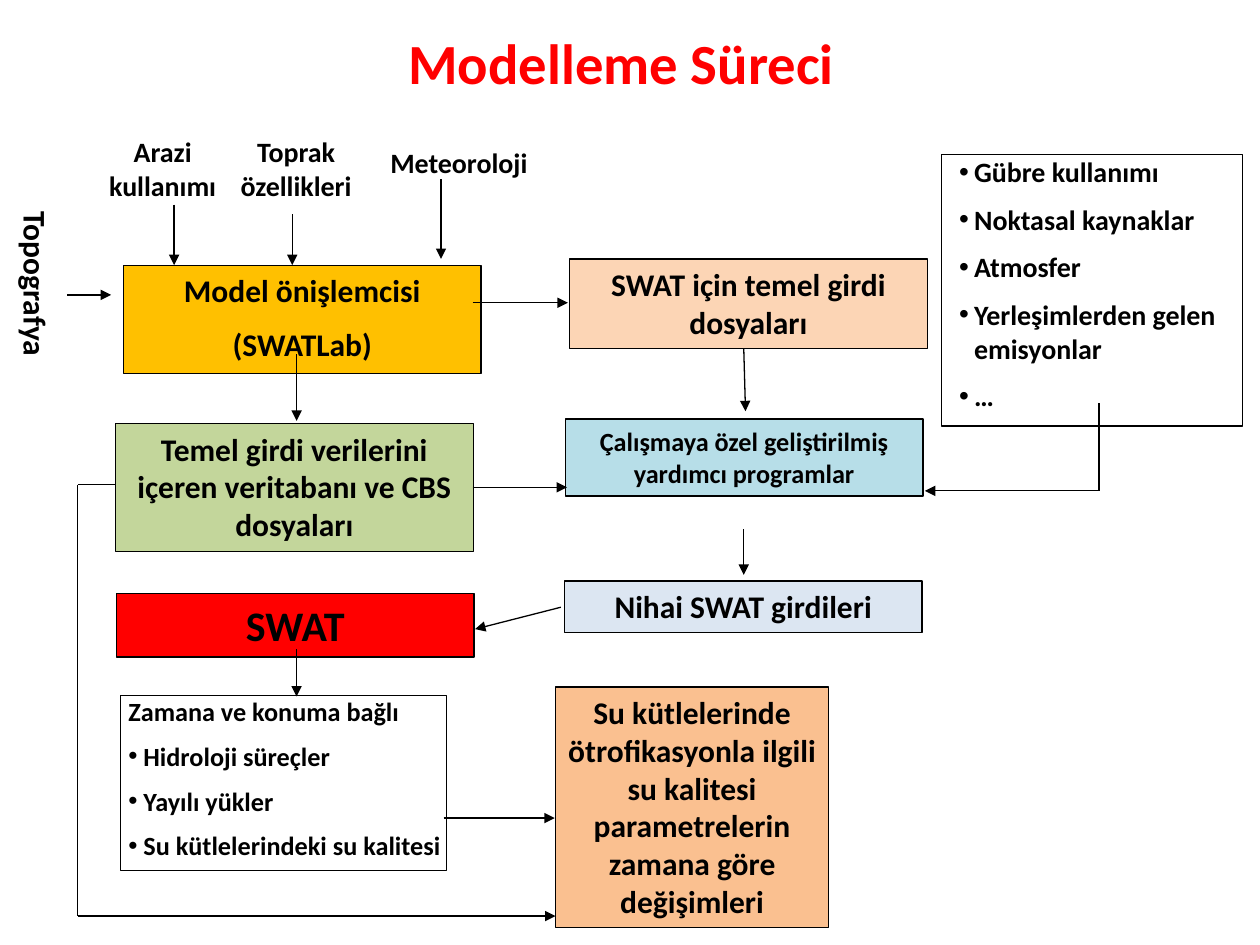
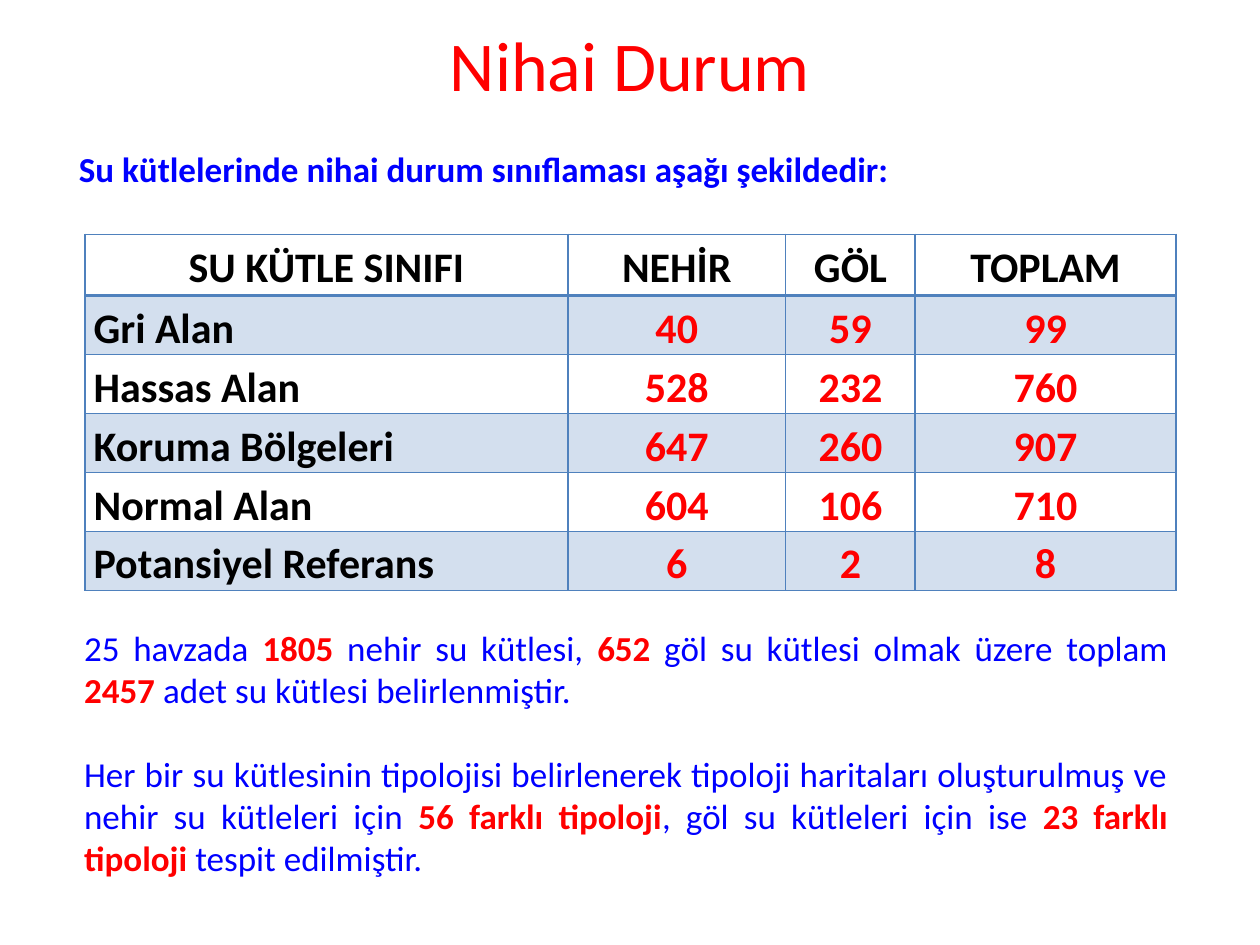
from lxml import etree
from pptx import Presentation
from pptx.dml.color import RGBColor
from pptx.enum.shapes import MSO_CONNECTOR, MSO_SHAPE
from pptx.enum.text import MSO_ANCHOR, PP_ALIGN
from pptx.oxml.ns import qn
from pptx.util import Pt

RECTANGLE = MSO_SHAPE.RECTANGLE
STRAIGHT = MSO_CONNECTOR.STRAIGHT
TOP, MIDDLE = MSO_ANCHOR.TOP, MSO_ANCHOR.MIDDLE
LEFT, CENTER, JUSTIFY = PP_ALIGN.LEFT, PP_ALIGN.CENTER, PP_ALIGN.JUSTIFY

FONT = "Calibri"
COLORS = {
    "red": "FF0000", "black": "000000", "blue": "0000FF", "gold": "FFC000",
    "peach": "FCD5B5", "aqua": "B7DEE8", "green": "C3D69B", "pale": "DCE6F2",
    "orange": "FAC090", "band": "D3DFEE", "border": "4F81BD",
}


def add_box(page, place, anchor=TOP, inset=True, outlined=False, fill=None):
    """Add a wrapping text box, or an outlined rectangle, and return it."""
    place = [Pt(length) for length in place]
    if outlined:
        box = page.shapes.add_shape(RECTANGLE, *place)
        box.shadow.inherit = False
        box.line.color.rgb = RGBColor.from_string(COLORS["black"])
        box.line.width = Pt(0.75)
        if fill:
            box.fill.solid()
            box.fill.fore_color.rgb = RGBColor.from_string(COLORS[fill])
        else:
            box.fill.background()
    else:
        box = page.shapes.add_textbox(*place)
    frame = box.text_frame
    frame.word_wrap = True
    frame.vertical_anchor = anchor
    if not inset:
        frame.margin_left = frame.margin_right = Pt(0)
        frame.margin_top = frame.margin_bottom = Pt(0)
    return box


def add_span(para, text, size, color="black", bold=True):
    span = para.add_run()
    span.text = text
    span.font.name = FONT
    span.font.size = Pt(size)
    span.font.bold = bold
    span.font.color.rgb = RGBColor.from_string(COLORS[color])


deck = Presentation()
deck.slide_width, deck.slide_height = Pt(720), Pt(540)
blank = deck.slide_layouts[6]
process_page = deck.slides.add_slide(blank)
status_page = deck.slides.add_slide(blank)

# Titles
titles = [
    (process_page, "Modelleme Süreci", (31, 15, 648, 41), 32.4, True),
    (status_page, "Nihai Durum", (36, -8.5, 648, 90), 40, False),
]
for page, title, place, size, bold in titles:
    para = add_box(page, place, MIDDLE).text_frame.paragraphs[0]
    para.alignment = CENTER
    add_span(para, title, size, "red", bold)

# Process: input labels
labels = [
    ("Topografya", (-26, 157, 93.5, 21.5), 18, LEFT, 90),
    ("Arazi kullanımı", (54, 77, 78, 39), 16, CENTER, 0),
    ("Toprak özellikleri", (127.5, 77, 83.5, 39), 16, CENTER, 0),
    ("Meteoroloji", (212.5, 83, 99.5, 19.5), 16, CENTER, 0),
]
for text, place, size, alignment, rotation in labels:
    label = add_box(process_page, place, inset=False)
    label.rotation = rotation
    para = label.text_frame.paragraphs[0]
    para.alignment = alignment
    add_span(para, text, size)

# Process: steps
STEP_WIDTH = 204.5
steps = [
    (["Model önişlemcisi", "(SWATLab)"], (70.5, 151.5, STEP_WIDTH, 62), 18, "gold"),
    (["SWAT için temel girdi dosyaları"], (325.5, 148, STEP_WIDTH, 51), 18, "peach"),
    (["Çalışmaya özel geliştirilmiş yardımcı programlar"],
     (323, 239.5, STEP_WIDTH, 44), 15, "aqua"),
    (["Temel girdi verilerini içeren veritabanı ve CBS dosyaları"],
     (66, 242, STEP_WIDTH, 73), 18, "green"),
    (["Nihai SWAT girdileri"], (322.5, 332, STEP_WIDTH, 29.5), 18, "pale"),
    (["SWAT"], (66.5, 339, STEP_WIDTH, 36.5), 24, "red"),
    (["Su kütlelerinde ötrofikasyonla ilgili su kalitesi "
      "parametrelerin zamana göre değişimleri"],
     (317.5, 392.5, 156, 137.5), 18, "orange"),
]
for lines, place, size, fill in steps:
    frame = add_box(process_page, place, outlined=True, fill=fill).text_frame
    for index, line in enumerate(lines):
        para = frame.add_paragraph() if index else frame.paragraphs[0]
        para.alignment = CENTER
        para.space_before = Pt(size / 2 if index else 0)
        add_span(para, line, size)

# Process: lists
HANGING = 8.6
lists = [
    (None, ["Gübre kullanımı", "Noktasal kaynaklar", "Atmosfer",
            "Yerleşimlerden gelen emisyonlar", "…"],
     (538, 88.5, 172, 155), 16, 18.7),
    ("Zamana ve konuma bağlı",
     ["Hidroloji süreçler", "Yayılı yükler", "Su kütlelerindeki su kalitesi"],
     (69, 397.5, 186, 100), 15, 13),
]
for heading, items, place, size, indent in lists:
    frame = add_box(process_page, place, inset=False, outlined=True).text_frame
    lines = [heading] + items if heading else items
    for index, line in enumerate(lines):
        para = frame.add_paragraph() if index else frame.paragraphs[0]
        para.alignment = LEFT
        para.space_before = Pt(size / 2 if index else 0)
        properties = para._p.get_or_add_pPr()
        properties.set("marL", str(Pt(indent)))
        properties.set("indent", str(-Pt(HANGING)))
        if line != heading:
            bullet_font = etree.SubElement(properties, qn("a:buFont"))
            bullet_font.set("typeface", "Arial")
            etree.SubElement(properties, qn("a:buChar")).set("char", "•")
        add_span(para, line, size)

# Process: connections, each from start to end, with or without an arrowhead
connections = [
    (38.5, 168.5, 63.5, 168.5, True),
    (99.5, 117, 99.5, 151.5, True),
    (167, 122.5, 167, 151.5, True),
    (252, 102.5, 252, 148, True),
    (270, 173, 324.5, 173, True),
    (169.5, 202.5, 169.5, 240.5, True),
    (425, 199, 426, 235, True),
    (270, 278.5, 324, 278.5, True),
    (628, 230.5, 628, 280.5, False),
    (628, 280.5, 528.5, 280.5, True),
    (425, 302.5, 425, 328.5, True),
    (320.5, 347, 271.5, 359.5, True),
    (169.5, 371, 169.5, 398, True),
    (253.5, 467.5, 317, 467.5, True),
    (65.5, 277, 44.5, 277, False),
    (44.5, 277, 44.5, 523.5, False),
    (44.5, 523.5, 317.5, 523.5, True),
]
for *ends, has_arrow in connections:
    connector = process_page.shapes.add_connector(STRAIGHT, *[Pt(end) for end in ends])
    connector.line.color.rgb = RGBColor.from_string(COLORS["black"])
    connector.line.width = Pt(0.75)
    if has_arrow:
        line = connector.line._get_or_add_ln()
        etree.SubElement(line, qn("a:tailEnd")).set("type", "triangle")
    etree.SubElement(connector._element.spPr, qn("a:effectLst"))

# Status: introduction
intro = add_box(status_page, (38, 81, 500, 31), MIDDLE)
add_span(intro.text_frame.paragraphs[0],
         "Su kütlelerinde nihai durum sınıflaması aşağı şekildedir:", 20, "blue")

# Status: table
rows = [
    ("SU KÜTLE SINIFI", "NEHİR", "GÖL", "TOPLAM"),
    ("Gri Alan", 40, 59, 99),
    ("Hassas Alan", 528, 232, 760),
    ("Koruma Bölgeleri", 647, 260, 907),
    ("Normal Alan", 604, 106, 710),
    ("Potansiyel Referans", 6, 2, 8),
]
column_widths = [276, 124.5, 74, 149]
HEADER_HEIGHT, ROW_HEIGHT = 35, 33.7
table = status_page.shapes.add_table(
    len(rows), len(column_widths), Pt(48.5), Pt(134), Pt(sum(column_widths)),
    Pt(HEADER_HEIGHT + ROW_HEIGHT * (len(rows) - 1))).table
table.first_row = table.horz_banding = False
for column, width in zip(table.columns, column_widths):
    column.width = Pt(width)
for row_index, values in enumerate(rows):
    table.rows[row_index].height = Pt(ROW_HEIGHT if row_index else HEADER_HEIGHT)
    for column_index, value in enumerate(values):
        cell = table.cell(row_index, column_index)
        cell.margin_left = cell.margin_right = Pt(5)
        cell.margin_top = cell.margin_bottom = Pt(0)
        para = cell.text_frame.paragraphs[0]
        para.alignment = CENTER if column_index or not row_index else LEFT
        para.line_spacing = 1.15
        add_span(para, str(value), 24, "red" if row_index and column_index else "black")
        header_edge = {0: "lnB", 1: "lnT"}.get(row_index)
        for edge in ("lnL", "lnR", "lnT", "lnB"):
            border = etree.SubElement(cell._tc.get_or_add_tcPr(), qn(f"a:{edge}"))
            border.set("w", str(Pt(2.25 if edge == header_edge else 1)))
            border_fill = etree.SubElement(border, qn("a:solidFill"))
            etree.SubElement(border_fill, qn("a:srgbClr")).set("val", COLORS["border"])
        if row_index % 2:
            cell.fill.solid()
            cell.fill.fore_color.rgb = RGBColor.from_string(COLORS["band"])
        else:
            cell.fill.background()

# Status: summary, where every second span is a highlighted figure
summary = [
    ["25 havzada ", "1805", " nehir su kütlesi, ", "652",
     " göl su kütlesi olmak üzere toplam ", "2457",
     " adet su kütlesi belirlenmiştir."],
    ["Her bir su kütlesinin tipolojisi belirlenerek tipoloji haritaları "
     "oluşturulmuş ve nehir su kütleleri için ", "56 farklı tipoloji",
     ", göl su kütleleri için ise ", "23 farklı tipoloji ", "tespit edilmiştir."],
]
frame = add_box(status_page, (41, 353.5, 633.5, 152.5), MIDDLE).text_frame
for index, spans in enumerate(summary):
    para = frame.add_paragraph() if index else frame.paragraphs[0]
    para.alignment = JUSTIFY
    para.space_before = Pt(24 if index else 0)
    for span_index, text in enumerate(spans):
        highlighted = span_index % 2 == 1
        add_span(para, text, 20, "red" if highlighted else "blue", highlighted)

deck.save("out.pptx")
